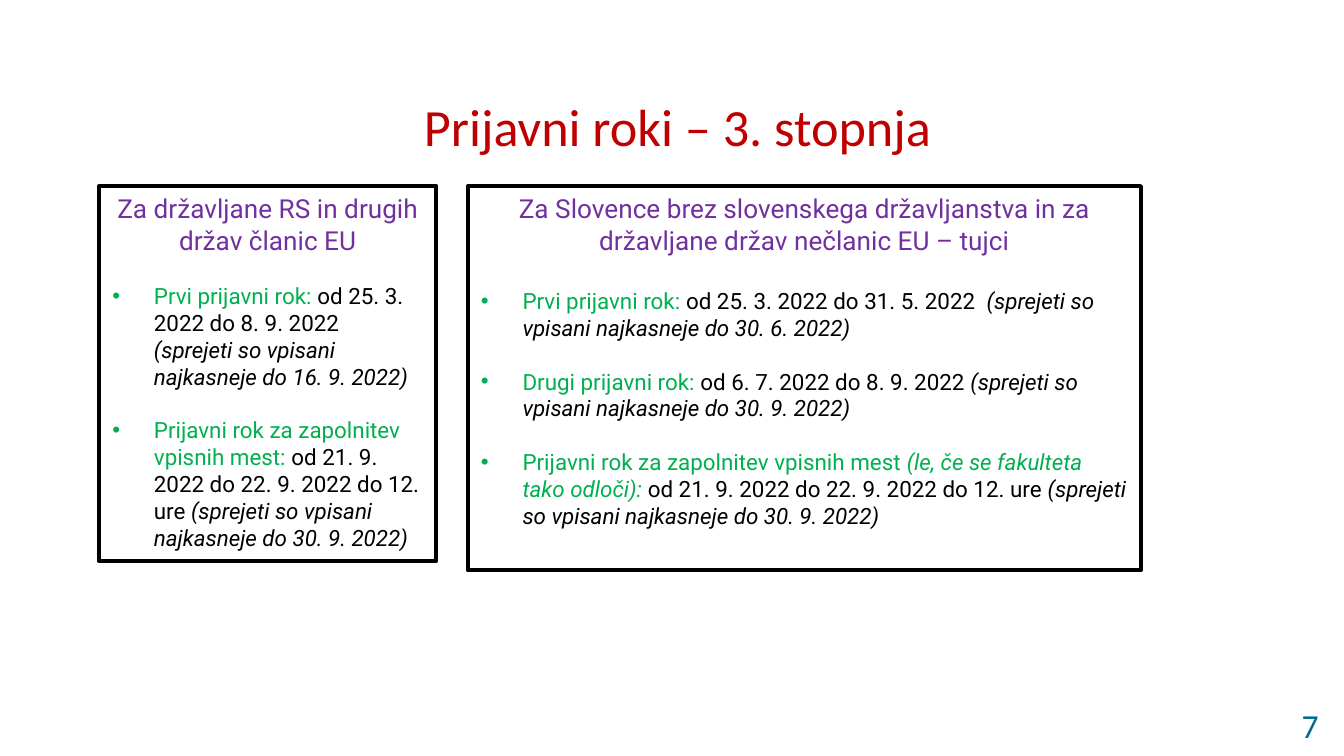
from pptx import Presentation
from pptx.dml.color import RGBColor
from pptx.enum.shapes import MSO_SHAPE
from pptx.enum.text import MSO_ANCHOR, PP_ALIGN
from pptx.oxml.xmlchemy import OxmlElement
from pptx.util import Inches, Pt

WHITE = RGBColor(0xFF, 0xFF, 0xFF)
BLACK = RGBColor(0x00, 0x00, 0x00)
RED = RGBColor(0xC0, 0x00, 0x00)
TEAL = RGBColor(0x00, 0x6A, 0x8E)
PURPLE = RGBColor(0x70, 0x30, 0xA0)
GREEN = RGBColor(0x00, 0xB0, 0x50)

WIDTH = Inches(10)
HEIGHT = WIDTH * 9 // 16
INDENT = Inches(0.31)
LINE_GAP = 14.4  # points between bullets: one line of body text


def area(left, top, width, height):
    """Turn percentages of the slide into lengths."""
    return (int(WIDTH * left / 100), int(HEIGHT * top / 100),
            int(WIDTH * width / 100), int(HEIGHT * height / 100))


def add_span(para, text, size=12, font="Roboto", color=BLACK, italic=False):
    span = para.add_run()
    span.text = text
    span.font.size = Pt(size)
    span.font.name = font
    span.font.color.rgb = color
    span.font.italic = italic


def add_label(page, box, text, align, bottom=0.05, **style):
    """Place one line of text, centred in the height of its box."""
    frame = page.shapes.add_textbox(*box).text_frame
    frame.word_wrap = True
    frame.vertical_anchor = MSO_ANCHOR.MIDDLE
    frame.margin_bottom = Inches(bottom)
    para = frame.paragraphs[0]
    para.alignment = align
    add_span(para, text, font="Calibri", **style)


def add_bullet(frame, spans, gap):
    para = frame.add_paragraph()
    para.alignment = PP_ALIGN.LEFT
    para.space_before = Pt(gap)
    properties = para._p.get_or_add_pPr()
    properties.set("marL", str(INDENT))
    properties.set("indent", str(-INDENT))
    bullet_font = OxmlElement("a:buFont")
    bullet_font.set("typeface", "Arial")
    bullet = OxmlElement("a:buChar")
    bullet.set("char", "•")
    properties.extend([bullet_font, bullet])
    for text, color, italic in spans:
        add_span(para, text, color=color, italic=italic)


def add_panel(page, box, heading, bullets, heading_gap):
    """Place a framed panel with a heading over its bulleted deadlines."""
    panel = page.shapes.add_shape(MSO_SHAPE.RECTANGLE, *box)
    panel.shadow.inherit = False
    panel.fill.solid()
    panel.fill.fore_color.rgb = WHITE
    panel.line.color.rgb = BLACK
    panel.line.width = Pt(2)
    frame = panel.text_frame
    frame.word_wrap = True
    frame.vertical_anchor = MSO_ANCHOR.TOP
    para = frame.paragraphs[0]
    para.alignment = PP_ALIGN.CENTER
    add_span(para, heading, size=14, color=PURPLE)
    for index, spans in enumerate(bullets):
        add_bullet(frame, spans, LINE_GAP if index else heading_gap)


def deadline(name, period, enrolment, condition=""):
    """List the spans of one deadline as text, colour and italic."""
    spans = [(name, GREEN, False), (condition, GREEN, True), (period, BLACK, False),
             (f"(sprejeti so vpisani najkasneje do {enrolment})", BLACK, True)]
    return [span for span in spans if span[0]]


EU_DEADLINES = [
    deadline("Prvi prijavni rok: ", "od 25. 3. 2022 do 8. 9. 2022  ", "16. 9. 2022"),
    deadline("Prijavni rok za zapolnitev vpisnih mest: ",
             "od 21. 9. 2022 do 22. 9. 2022 do 12. ure ", "30. 9. 2022"),
]
FOREIGN_DEADLINES = [
    deadline("Prvi prijavni rok: ", "od 25. 3. 2022 do 31. 5. 2022  ", "30. 6. 2022"),
    deadline("Drugi prijavni rok: ", "od 6. 7. 2022 do 8. 9. 2022 ", "30. 9. 2022"),
    deadline("Prijavni rok za zapolnitev vpisnih mest ",
             "od 21. 9. 2022 do 22. 9. 2022 do 12. ure ", "30. 9. 2022",
             condition="(le, če se fakulteta tako odloči): "),
]


def main():
    deck = Presentation()
    deck.slide_width, deck.slide_height = WIDTH, HEIGHT
    page = deck.slides.add_slide(deck.slide_layouts[6])

    # Title and page number
    add_label(page, area(5.8, 9.07, 89.2, 23.47), "Prijavni roki – 3. stopnja",
              PP_ALIGN.CENTER, bottom=0.52, size=28, color=RED)
    add_label(page, area(89.3, 93.03, 9.8, 5.69), "7",
              PP_ALIGN.RIGHT, size=18, color=TEAL)

    # Deadlines for the two groups of applicants
    add_panel(page, area(7.37, 24.6, 25.1, 49.65),
              "Za državljane RS in drugih držav članic EU",
              EU_DEADLINES, heading_gap=LINE_GAP)
    add_panel(page, area(34.8, 24.6, 50.1, 50.85),
              "Za Slovence brez slovenskega državljanstva in za "
              "državljane držav nečlanic EU – tujci",
              FOREIGN_DEADLINES, heading_gap=17)

    deck.save("out.pptx")


if __name__ == "__main__":
    main()
